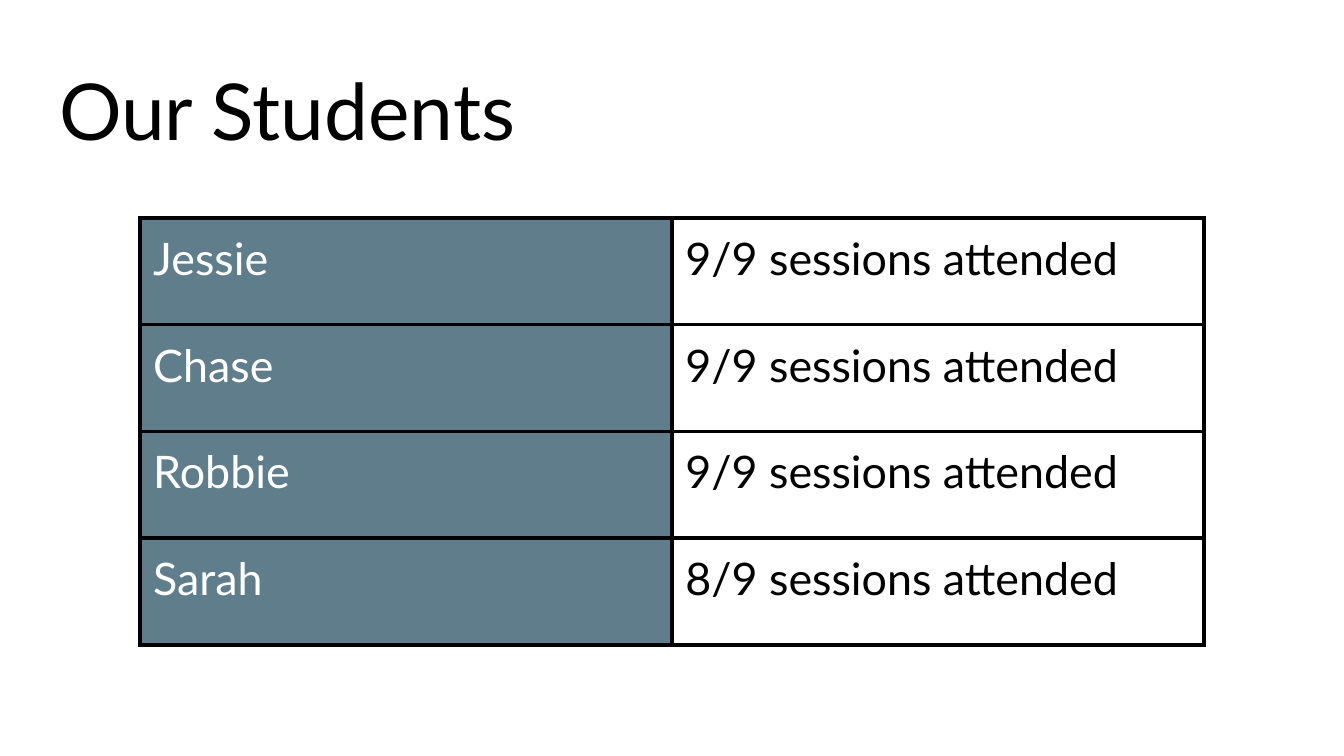
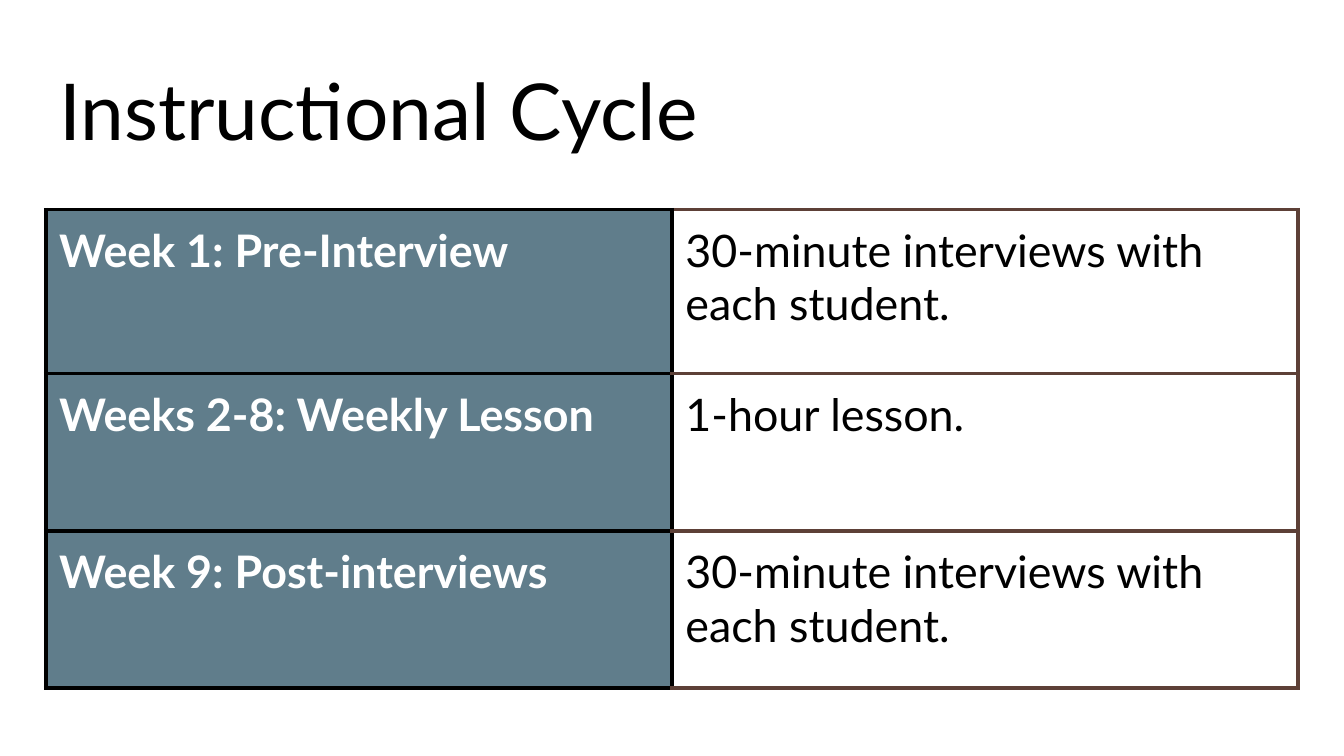
from lxml.etree import SubElement
from pptx import Presentation
from pptx.dml.color import RGBColor
from pptx.enum.text import MSO_ANCHOR as Anchor, MSO_AUTO_SIZE as AutoSize, PP_ALIGN as Align
from pptx.oxml.ns import qn
from pptx.util import Inches, Pt

# Shared look
BLACK = RGBColor(0x00, 0x00, 0x00)
WHITE = RGBColor(0xFF, 0xFF, 0xFF)
SLATE = RGBColor(0x60, 0x7D, 0x8B)
BROWN = RGBColor(0x5D, 0x40, 0x37)
FONT = "Lato"
SLIDE_W = Inches(10)
SLIDE_H = SLIDE_W * 9 // 16
MARGIN = Inches(0.34)
INSET = Inches(0.1)
BORDER = Pt(2.25)

STUDENTS = [
    ("Jessie", "9/9 sessions attended"),
    ("Chase", "9/9 sessions attended"),
    ("Robbie", "9/9 sessions attended"),
    ("Sarah", "8/9 sessions attended"),
]
CYCLE = [
    ("Week 1: Pre-Interview", "30-minute interviews with each student."),
    ("Weeks 2-8: Weekly Lesson", "1-hour lesson."),
    ("Week 9: Post-interviews", "30-minute interviews with each student."),
]


def format_text(frame, size, color, bold=False):
    for paragraph in frame.paragraphs:
        paragraph.alignment = Align.LEFT
        for run in paragraph.runs:
            run.font.name = FONT
            run.font.size = Pt(size)
            run.font.bold = bold
            run.font.color.rgb = color


def set_insets(box):
    box.margin_left = box.margin_right = INSET
    box.margin_top = box.margin_bottom = INSET


def add_titled_slide(prs, heading):
    slide = prs.slides.add_slide(prs.slide_layouts[5])
    title = slide.shapes.title
    title.left, title.top = MARGIN, Inches(0.35)
    title.width, title.height = SLIDE_W - 2 * MARGIN, Inches(0.91)
    frame = title.text_frame
    frame.text = heading
    frame.word_wrap = True
    frame.auto_size = AutoSize.NONE
    frame.vertical_anchor = Anchor.BOTTOM
    set_insets(frame)
    format_text(frame, 42, BLACK)
    return slide


def set_borders(cell, left, others):
    properties = cell._tc.get_or_add_tcPr()
    edges = (("L", left), ("R", others), ("T", others), ("B", others))
    for position, (side, color) in enumerate(edges):
        line = SubElement(properties, qn(f"a:ln{side}"), w=str(BORDER))
        fill = SubElement(line, qn("a:solidFill"))
        SubElement(fill, qn("a:srgbClr"), val=str(color))
        # Borders come before the fill
        properties.insert(position, line)


def fill_cell(cell, text, color, bold=False):
    cell.text_frame.text = text
    cell.vertical_anchor = Anchor.TOP
    set_insets(cell)
    format_text(cell.text_frame, 24, color, bold)


def add_label_table(slide, entries, top, width, row_heights,
                    bold_labels=False, detail_border=BLACK):
    """Two equal columns, centred on the slide: filled labels and plain details."""
    table = slide.shapes.add_table(
        len(entries), 2, (SLIDE_W - width) // 2, top, width, sum(row_heights)).table
    table.first_row = table.horz_banding = False
    for column in table.columns:
        column.width = width // 2
    for row, height, (label, detail) in zip(table.rows, row_heights, entries):
        row.height = height
        label_cell, detail_cell = row.cells
        fill_cell(label_cell, label, WHITE, bold_labels)
        label_cell.fill.solid()
        label_cell.fill.fore_color.rgb = SLATE
        set_borders(label_cell, BLACK, BLACK)
        fill_cell(detail_cell, detail, BLACK)
        detail_cell.fill.background()
        set_borders(detail_cell, BLACK, detail_border)


def main():
    prs = Presentation()
    prs.slide_width, prs.slide_height = SLIDE_W, SLIDE_H

    # Attendance by student
    students = add_titled_slide(prs, "Our Students")
    add_label_table(students, STUDENTS, Inches(1.62), Inches(7.92),
                    [Inches(0.795)] * len(STUDENTS))

    # Weeks of the programme
    cycle = add_titled_slide(prs, "Instructional Cycle")
    add_label_table(cycle, CYCLE, Inches(1.56), SLIDE_W - 2 * MARGIN,
                    [Inches(1.22), Inches(1.17), Inches(1.17)],
                    bold_labels=True, detail_border=BROWN)

    prs.save("out.pptx")


if __name__ == "__main__":
    main()
